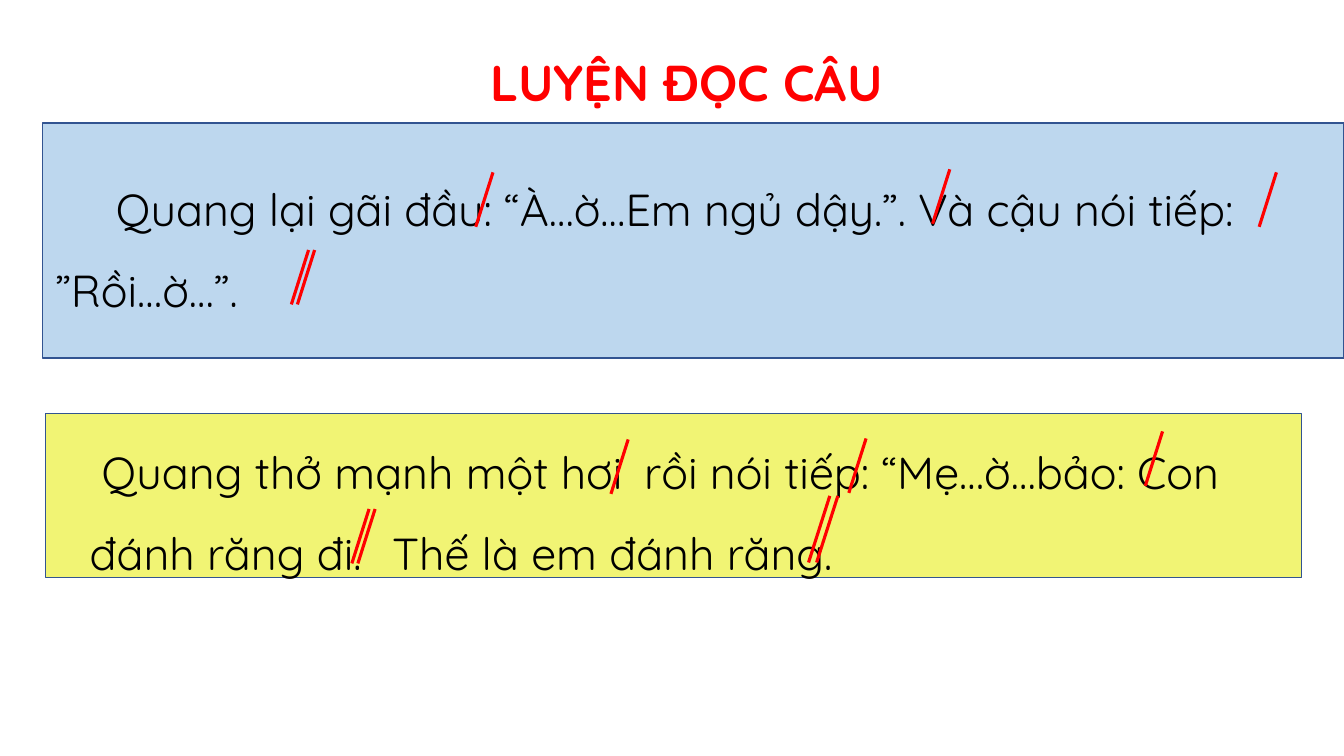
from lxml.etree import SubElement
from pptx import Presentation
from pptx.dml.color import RGBColor
from pptx.enum.shapes import MSO_CONNECTOR, MSO_SHAPE
from pptx.enum.text import MSO_ANCHOR, MSO_AUTO_SIZE, PP_ALIGN
from pptx.oxml.ns import qn
from pptx.util import Inches, Pt

deck = Presentation()
deck.slide_width, deck.slide_height = Inches(13.33), Inches(7.5)
# Grid of 100 columns by 100 rows
COL, ROW = deck.slide_width / 100, deck.slide_height / 100
RED = "FF0000"


def color(hex_code):
    return RGBColor.from_string(hex_code)


def write(holder, text, size=32, ink="000000", bold=False, spacing=1.0, indent=0, tabs=()):
    frame = holder.text_frame
    frame.word_wrap = True
    frame.auto_size = MSO_AUTO_SIZE.NONE
    frame.vertical_anchor = MSO_ANCHOR.TOP
    paragraph = frame.paragraphs[0]
    paragraph.alignment = PP_ALIGN.LEFT
    paragraph.line_spacing = spacing
    paragraph.space_before = Pt(0)
    properties = paragraph._p.get_or_add_pPr()
    properties.set("marL", "0")
    properties.set("indent", str(int(indent * COL)))
    if tabs:
        stops = SubElement(properties, qn("a:tabLst"))
        for stop in tabs:
            SubElement(stops, qn("a:tab"), pos=str(int(stop * COL)), algn="l")
    run = paragraph.add_run()
    run.text = text
    run.font.name, run.font.size, run.font.bold = "Quicksand", Pt(size), bold
    run.font.color.rgb = color(ink)


slide = deck.slides.add_slide(deck.slide_layouts[5])

# Heading
heading = slide.shapes.title
heading.left, heading.top = int(35.78 * COL), int(6.13 * ROW)
heading.width, heading.height = int(56.11 * COL), int(9.47 * ROW)
write(heading, "LUYỆN ĐỌC CÂU", size=36, ink=RED, bold=True)

# Panels behind the sentences
for left, top, width, height, tint in (
    (3.15, 16.27, 96.85, 31.07, "BDD7EE"),
    (3.38, 54.67, 93.47, 21.73, "F1F474"),
):
    panel = slide.shapes.add_shape(
        MSO_SHAPE.RECTANGLE, int(left * COL), int(top * ROW), int(width * COL), int(height * ROW))
    panel.shadow.inherit = False
    panel.fill.solid()
    panel.fill.fore_color.rgb = color(tint)
    panel.line.color.rgb = color("325491")
    panel.line.width = Pt(1)

# Sentences to read aloud
for left, top, width, height, words, indent, tabs in (
    (3.38, 19.87, 96.62, 33.6,
     "Quang lại gãi đầu: “À…ờ…Em ngủ dậy.”. Và cậu nói tiếp: ”Rồi…ờ…”.", 4.5, ()),
    (5.93, 54.67, 89.65, 22.93,
     "Quang thở mạnh một hơi\trồi nói tiếp: “Mẹ…ờ…bảo: Con đánh răng đi.\tThế là em đánh răng.",
     0.9, (22, 41.4)),
):
    sentence = slide.shapes.add_textbox(
        int(left * COL), int(top * ROW), int(width * COL), int(height * ROW))
    write(sentence, words, spacing=1.5, indent=indent, tabs=tabs)

# Pause marks: upper end, lean, drop, and the gap to a second stroke
SHORT, LONG = (1.28, 7.2), (1.58, 8.8)
for x, y, (lean, drop), gap in (
    (36.68, 22.8, SHORT, 0),
    (70.67, 22.4, SHORT, 0),
    (94.97, 22.8, SHORT, 0),
    (22.96, 33.07, SHORT, 0.45),
    (46.74, 58.13, SHORT, 0),
    (64.44, 58, SHORT, 0),
    (86.5, 57.07, SHORT, 0),
    (27.46, 67.33, SHORT, 0.45),
    (61.74, 65.6, LONG, 0.6),
):
    for offset in ((0, gap) if gap else (0,)):
        pause = slide.shapes.add_connector(
            MSO_CONNECTOR.STRAIGHT, int((x + offset) * COL), int(y * ROW),
            int((x + offset - lean) * COL), int((y + drop) * ROW))
        pause.line.color.rgb = color(RED)
        pause.line.width = Pt(2.25)
        SubElement(pause._element.spPr, qn("a:effectLst"))

deck.save("out.pptx")
